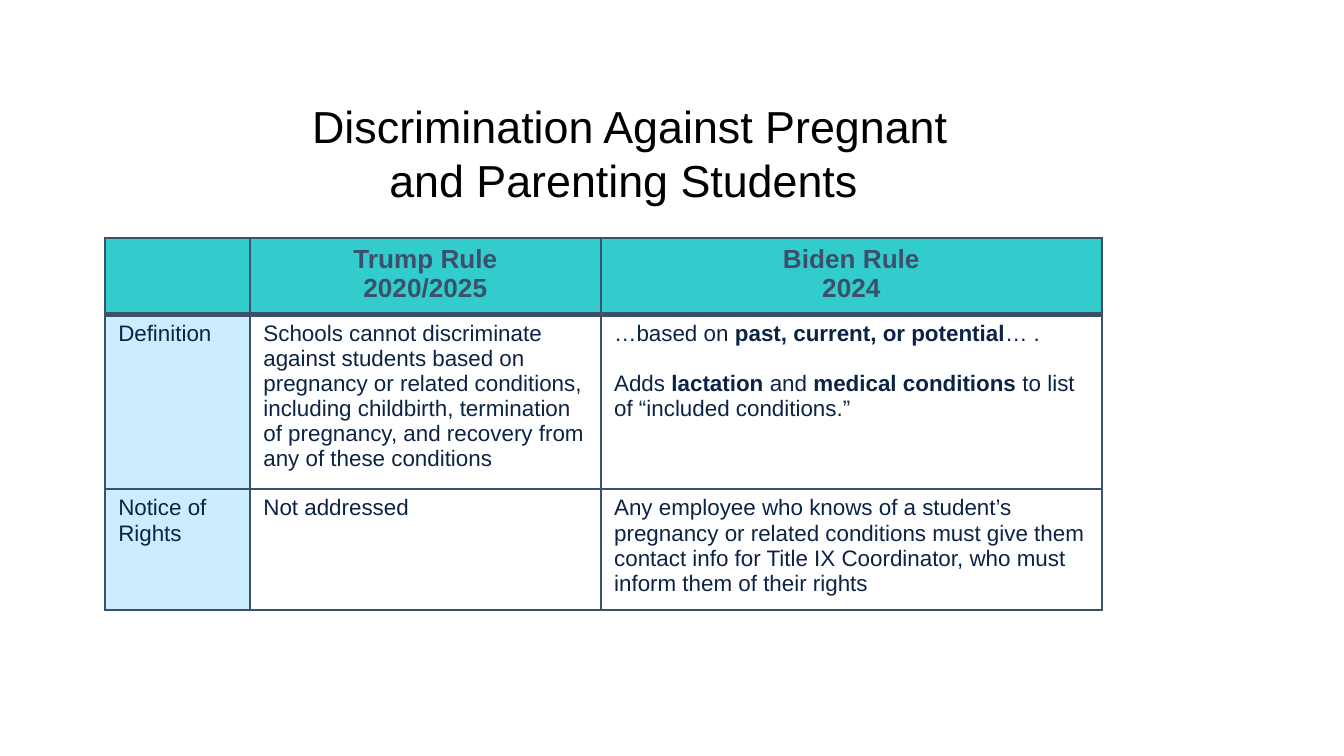
import pptx
import pptx.util
import pptx.dml.color
import pptx.enum.text
import pptx.oxml
from pptx.util import Inches

TITLE = "Discrimination Against Pregnant and Parenting Students "
# Each cell is a list of paragraphs, each paragraph a list of (text, bold) spans
ROWS = [
    [
        [],
        [[("Trump Rule", True)], [("2020/2025", True)]],
        [[("Biden Rule", True)], [("2024", True)]],
    ],
    [
        [[("Definition", False)]],
        [[("Schools cannot discriminate against students based on pregnancy or "
           "related conditions, including childbirth, termination of pregnancy, "
           "and recovery from any of these conditions", False)]],
        [
            [("…based on ", False), ("past, current, or potential", True), ("… .", False)],
            [("Adds ", False), ("lactation", True), (" and ", False),
             ("medical conditions", True), (" to list of “included conditions.”", False)],
        ],
    ],
    [
        [[("Notice of Rights", False)]],
        [[("Not addressed", False)]],
        [[("Any employee who knows of a student’s pregnancy or related conditions "
           "must give them contact info for Title IX Coordinator, who must inform "
           "them of their rights", False)]],
    ],
]
COLUMN_WIDTHS = [1.08, 2.61, 3.73]
ROW_HEIGHTS = [0.37, 0.27, 0.27]  # minimum heights: rows grow with their text
TABLE_LEFT, TABLE_TOP, TABLE_HEIGHT = 0.78, 1.77, 2.77

CENTER = pptx.enum.text.PP_ALIGN.CENTER
LEFT = pptx.enum.text.PP_ALIGN.LEFT
HEADER_FILL, LABEL_FILL, BORDER = "33CCCC", "CCECFF", "3C4F6B"
TITLE_FORMAT = {"name": "Arial", "size": pptx.util.Pt(24), "bold": False}
HEADER_FORMAT = {"name": "Arial", "size": pptx.util.Pt(14)}
BODY_FORMAT = {"name": "Arial", "size": pptx.util.Pt(12)}
PARAGRAPH_GAP = pptx.util.Pt(13.4)


def color(value):
    return pptx.dml.color.RGBColor.from_string(value)


def set_all(target, values):
    for name, value in values.items():
        setattr(target, name, value)


def add_span(para, text, font_format, font_color):
    span = para.add_run()
    span.text = text
    set_all(span.font, font_format)
    span.font.color.rgb = color(font_color)


def set_borders(cell, widths):
    """Borders come before the fill in the cell properties."""
    properties = cell._tc.get_or_add_tcPr()
    for index, (side, points) in enumerate(widths.items()):
        properties.insert(index, pptx.oxml.parse_xml(
            f'<a:ln{side} xmlns:a="http://schemas.openxmlformats.org/drawingml/2006/main" '
            f'w="{pptx.util.Pt(points)}"><a:solidFill><a:srgbClr val="{BORDER}"/>'
            f'</a:solidFill></a:ln{side}>'))


def fill_cell(cell, paragraphs, row, column):
    is_header = row == 0
    fill = HEADER_FILL if is_header else LABEL_FILL if column == 0 else None
    if fill:
        cell.fill.solid()
        cell.fill.fore_color.rgb = color(fill)
    else:
        cell.fill.background()
    set_borders(cell, {"L": 1, "R": 1, "T": 3 if row == 1 else 1, "B": 3 if is_header else 1})

    for index, spans in enumerate(paragraphs):
        frame = cell.text_frame
        para = frame.add_paragraph() if index else frame.paragraphs[0]
        para.alignment = CENTER if is_header else LEFT
        if index and not is_header:
            para.space_before = PARAGRAPH_GAP
        for text, bold in spans:
            base = HEADER_FORMAT if is_header else BODY_FORMAT
            add_span(para, text, {**base, "bold": bold}, BORDER if is_header else "0B2346")


def main():
    # A 16:9 page
    deck = pptx.Presentation()
    set_all(deck, {"slide_width": Inches(10), "slide_height": Inches(10 * 9 / 16)})
    page = deck.slides.add_slide(deck.slide_layouts[5])

    # Table
    holder = page.shapes.add_table(
        len(ROWS), len(COLUMN_WIDTHS), Inches(TABLE_LEFT), Inches(TABLE_TOP),
        Inches(sum(COLUMN_WIDTHS)), Inches(TABLE_HEIGHT))
    table = holder.table
    set_all(table, {"first_row": False, "horz_banding": False})
    for column, width in zip(table.columns, COLUMN_WIDTHS):
        column.width = Inches(width)
    for row, height in zip(table.rows, ROW_HEIGHTS):
        row.height = Inches(height)
    holder.height = Inches(TABLE_HEIGHT)
    for row, cells in enumerate(ROWS):
        for column, paragraphs in enumerate(cells):
            fill_cell(table.cell(row, column), paragraphs, row, column)

    # Title
    title = page.shapes.title
    set_all(title, {"left": Inches(2.13), "top": Inches(0.68),
                    "width": Inches(5.11), "height": Inches(0.91)})
    set_all(title.text_frame, {
        "word_wrap": True,
        "auto_size": pptx.enum.text.MSO_AUTO_SIZE.SHAPE_TO_FIT_TEXT,
        "vertical_anchor": pptx.enum.text.MSO_ANCHOR.MIDDLE})
    para = title.text_frame.paragraphs[0]
    para.alignment = CENTER
    add_span(para, TITLE, TITLE_FORMAT, "000000")

    deck.save("out.pptx")


if __name__ == "__main__":
    main()
